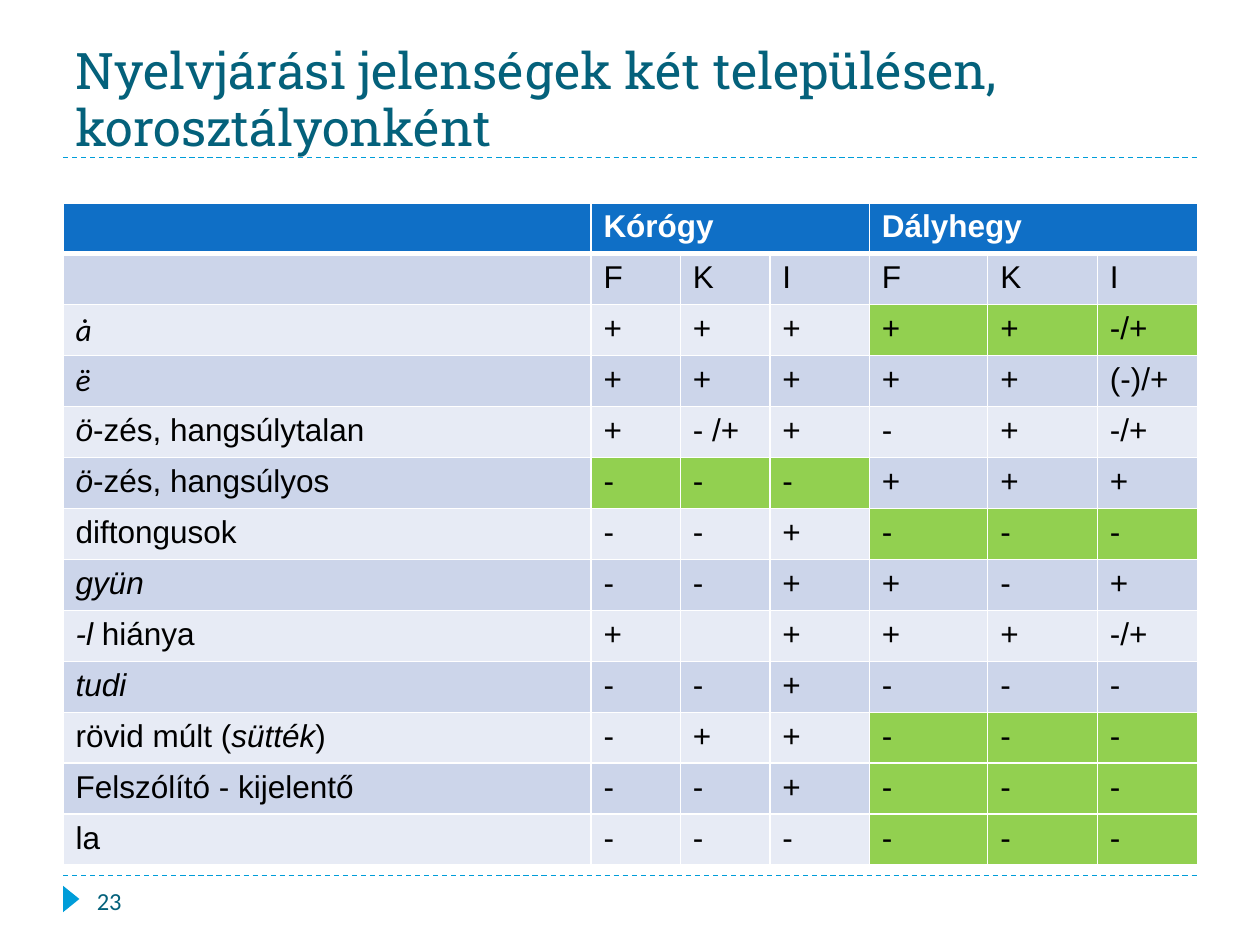
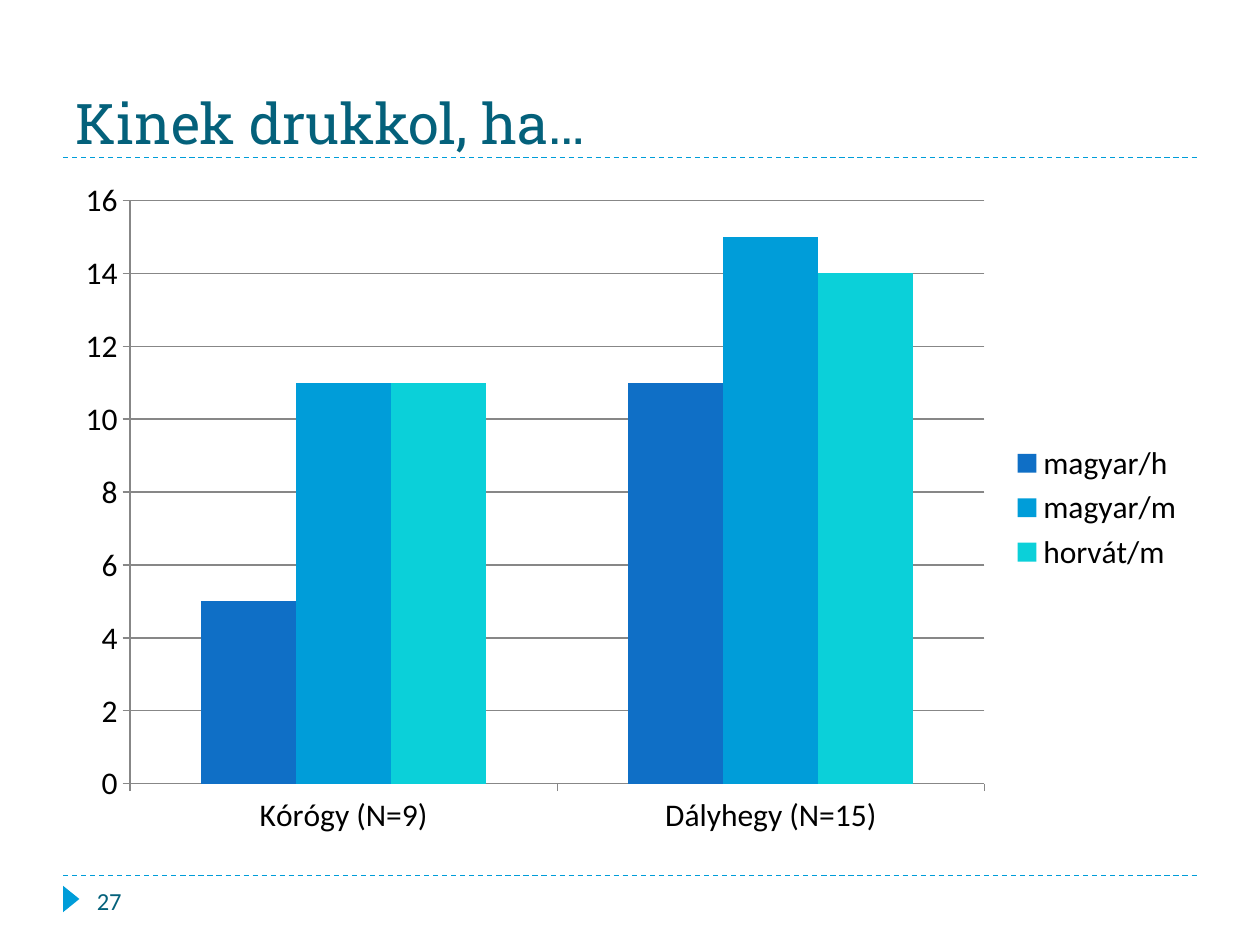
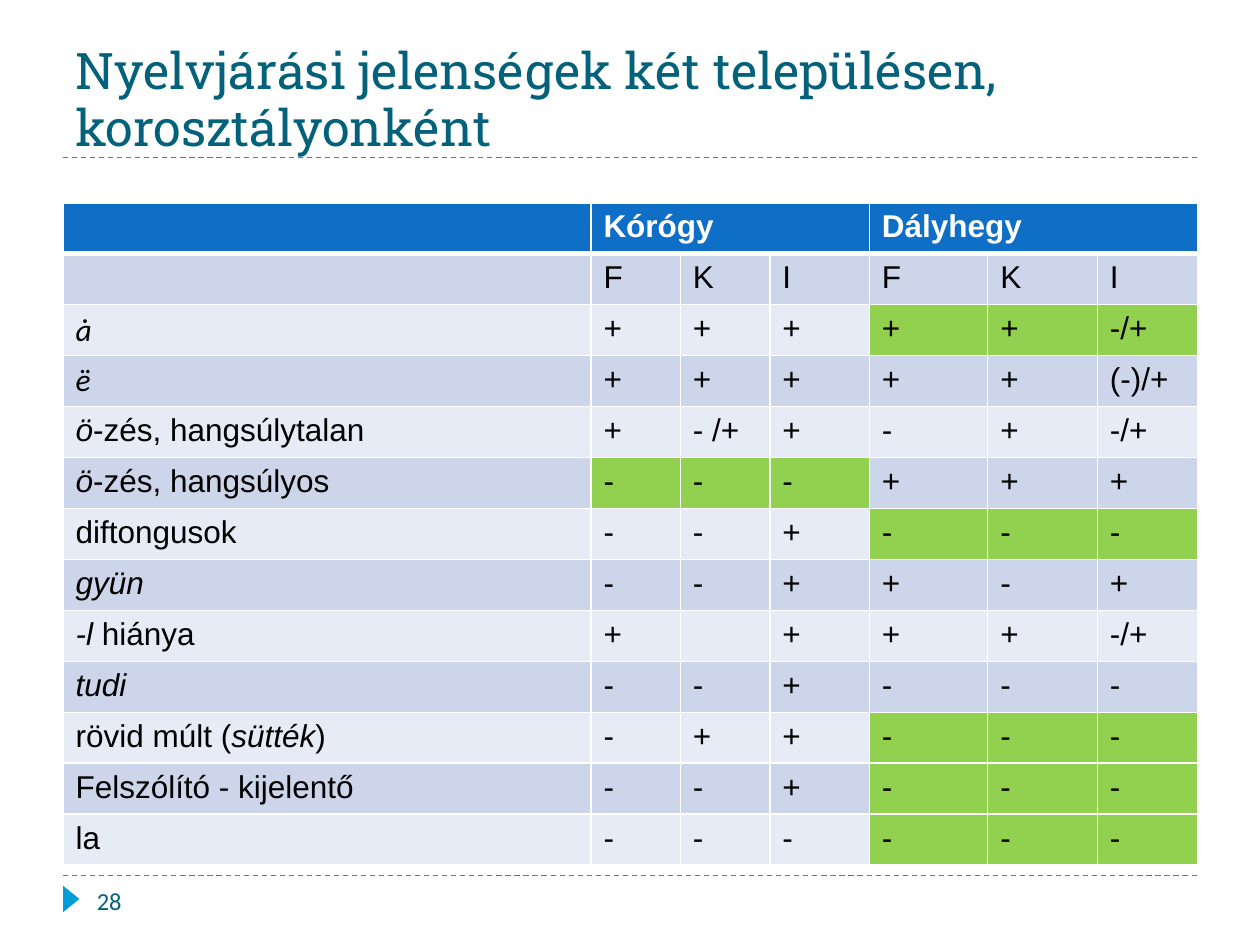
from lxml import etree
from pptx import Presentation
from pptx.chart.data import CategoryChartData
from pptx.dml.color import RGBColor
from pptx.enum.chart import XL_CHART_TYPE, XL_LEGEND_POSITION
from pptx.enum.dml import MSO_LINE
from pptx.enum.shapes import MSO_CONNECTOR, MSO_SHAPE
from pptx.enum.text import MSO_ANCHOR, MSO_AUTO_SIZE, PP_ALIGN
from pptx.oxml.ns import qn
from pptx.util import Inches, Pt

COLUMNS = XL_CHART_TYPE.COLUMN_CLUSTERED
RIGHT = XL_LEGEND_POSITION.RIGHT
DASH = MSO_LINE.DASH
STRAIGHT = MSO_CONNECTOR.STRAIGHT
TRIANGLE = MSO_SHAPE.ISOSCELES_TRIANGLE
MIDDLE, BOTTOM = MSO_ANCHOR.MIDDLE, MSO_ANCHOR.BOTTOM
NO_FIT = MSO_AUTO_SIZE.NONE
LEFT = PP_ALIGN.LEFT

TEAL, BLUE, SKY, AQUA = "04617B", "0F6FC6", "009DD9", "0BD0D9"
BANDS = ["E7EBF5", "CCD5EA"]
GREEN, WHITE, BLACK, GREY = "92D050", "FFFFFF", "000000", "878787"
MARGIN, WIDTH = 0.5, 9
TITLE_BOTTOM, FOOTER_TOP = 1.25, 6.95


def rgb(color):
    return RGBColor.from_string(color)


def write(tf, text, font="Arial", size=18, color=BLACK, bold=False):
    """Fill the first paragraph; parts between asterisks are italic."""
    p = tf.paragraphs[0]
    p.alignment = LEFT
    for i, part in enumerate(text.split("*")):
        if part:
            r = p.add_run()
            r.text = part
            r.font.name, r.font.size = font, Pt(size)
            r.font.color.rgb = rgb(color)
            r.font.bold, r.font.italic = bold, i % 2 == 1
    return p


DIALECT_TITLE = "Nyelvjárási jelenségek két településen, korosztályonként"
SLIDES = [  # title, title size, page number, kind of content
    (DIALECT_TITLE, 28.8, "23", "table"),
    ("Kinek drukkol, ha…", 32, "27", "chart"),
    (DIALECT_TITLE, 28.8, "28", "table"),
]

COL_WIDTHS = [4.19, 0.71, 0.71, 0.79, 0.94, 0.87, 0.8]
KOROGY, DALYHEGY = range(1, 4), range(4, 7)
ROWS = [  # label, values for both villages, highlighted columns
    ("", ["F", "K", "I", "F", "K", "I"], ()),
    ("*ȧ*", ["+", "+", "+", "+", "+", "-/+"], DALYHEGY),
    ("*ë*", ["+", "+", "+", "+", "+", "(-)/+"], ()),
    ("*ö*-zés, hangsúlytalan", ["+", "- /+", "+", "-", "+", "-/+"], ()),
    ("*ö*-zés, hangsúlyos", ["-", "-", "-", "+", "+", "+"], KOROGY),
    ("diftongusok", ["-", "-", "+", "-", "-", "-"], DALYHEGY),
    ("*gyün*", ["-", "-", "+", "+", "-", "+"], ()),
    ("*-l *hiánya", ["+", "", "+", "+", "+", "-/+"], ()),
    ("*tudi*", ["-", "-", "+", "-", "-", "-"], ()),
    ("rövid múlt (*sütték*)", ["-", "+", "+", "-", "-", "-"], DALYHEGY),
    ("Felszólító - kijelentő", ["-", "-", "+", "-", "-", "-"], DALYHEGY),
    ("la", ["-", "-", "-", "-", "-", "-"], DALYHEGY),
]
CALIBRI_LABELS = ("*ȧ*", "*ë*")
SERIES = [
    ("magyar/h", (5, 11), BLUE),
    ("magyar/m", (11, 15), SKY),
    ("horvát/m", (11, 14), AQUA),
]

prs = Presentation()
prs.slide_width, prs.slide_height = Inches(10), Inches(7.5)

for title, title_size, number, kind in SLIDES:
    s = prs.slides.add_slide(prs.slide_layouts[5])

    # Dashed rules above and below the content
    for y in (FOOTER_TOP, TITLE_BOTTOM):
        rule = s.shapes.add_connector(STRAIGHT, Inches(MARGIN), Inches(y),
                                      Inches(MARGIN + WIDTH), Inches(y))
        rule.line.color.rgb = rgb(SKY)
        rule.line.width, rule.line.dash_style = Pt(0.75), DASH
        etree.SubElement(rule._element.spPr, qn("a:effectLst"))

    # Footer marker and page number
    sp = s.shapes.add_shape(TRIANGLE, Inches(0.46), Inches(7.07), Inches(0.21), Inches(0.13))
    sp.rotation = 90
    sp.shadow.inherit = False
    sp.fill.solid()
    sp.fill.fore_color.rgb = rgb(SKY)
    sp.line.fill.background()
    tf = s.shapes.add_textbox(Inches(0.67), Inches(FOOTER_TOP), Inches(2.17), Inches(0.4)).text_frame
    tf.word_wrap, tf.vertical_anchor = True, MIDDLE
    write(tf, number, font="Calibri", size=14, color=TEAL)

    # Title
    sp = s.shapes.title
    sp.left, sp.top = Inches(MARGIN), Inches(0.17)
    sp.width, sp.height = Inches(WIDTH), Inches(TITLE_BOTTOM - 0.17)
    tf = sp.text_frame
    tf.word_wrap, tf.auto_size = True, NO_FIT
    tf.vertical_anchor, tf.margin_bottom = BOTTOM, 0
    p = write(tf, title, font="Roboto Slab", size=title_size, color=TEAL)
    p.line_spacing = 0.93

    if kind == "table":
        # Table of dialect features
        row_count = len(ROWS) + 1
        table = s.shapes.add_table(row_count, len(COL_WIDTHS), Inches(MARGIN), Inches(1.61),
                                   Inches(WIDTH), Inches(5.26)).table
        for col, width in zip(table.columns, COL_WIDTHS):
            col.width = Inches(width)
        for row in table.rows:
            row.height = Inches(5.26 / row_count)

        for village, cols in (("Kórógy", KOROGY), ("Dályhegy", DALYHEGY)):
            head = table.cell(0, cols[0])
            head.merge(table.cell(0, cols[-1]))
            write(head.text_frame, village, color=WHITE, bold=True)

        for i, (label, values, marked) in enumerate(ROWS, start=1):
            for j, text in enumerate([label] + values):
                font = "Calibri" if text in CALIBRI_LABELS else "Arial"
                write(table.cell(i, j).text_frame, text, font=font)

        # Cell fills and white borders
        for i in range(row_count):
            for j in range(len(COL_WIDTHS)):
                cell = table.cell(i, j)
                if i == 0:
                    color = BLUE
                else:
                    color = GREEN if j in ROWS[i - 1][2] else BANDS[i % 2]
                cell.fill.solid()
                cell.fill.fore_color.rgb = rgb(color)
                tcPr = cell._tc.get_or_add_tcPr()
                for k, side in enumerate("LRTB"):
                    thick = (i, side) in ((0, "B"), (1, "T"))
                    ln = etree.Element(qn("a:ln" + side), w=str(Pt(3 if thick else 1)))
                    fill = etree.SubElement(ln, qn("a:solidFill"))
                    etree.SubElement(fill, qn("a:srgbClr"), val=WHITE)
                    tcPr.insert(k, ln)
    else:
        # Column chart of supporters
        data = CategoryChartData()
        data.categories = ["Kórógy (N=9)", "Dályhegy (N=15)"]
        for name, values, color in SERIES:
            data.add_series(name, values)
        chart = s.shapes.add_chart(COLUMNS, Inches(MARGIN), Inches(1.33),
                                   Inches(WIDTH), Inches(5.4), data).chart
        chart.has_title = False
        chart.font.name, chart.font.size = "Calibri", Pt(18)
        chart.font.color.rgb = rgb(BLACK)
        chart.has_legend = True
        chart.legend.position, chart.legend.include_in_layout = RIGHT, False
        plot = chart.plots[0]
        plot.gap_width, plot.overlap, plot.vary_by_categories = 150, 0, False
        for series, (name, values, color) in zip(plot.series, SERIES):
            series.format.fill.solid()
            series.format.fill.fore_color.rgb = rgb(color)
        chart.value_axis.has_major_gridlines = True
        for part in (chart.category_axis, chart.value_axis, chart.value_axis.major_gridlines):
            part.format.line.color.rgb = rgb(GREY)
            part.format.line.width = Pt(0.75)

prs.save("out.pptx")
